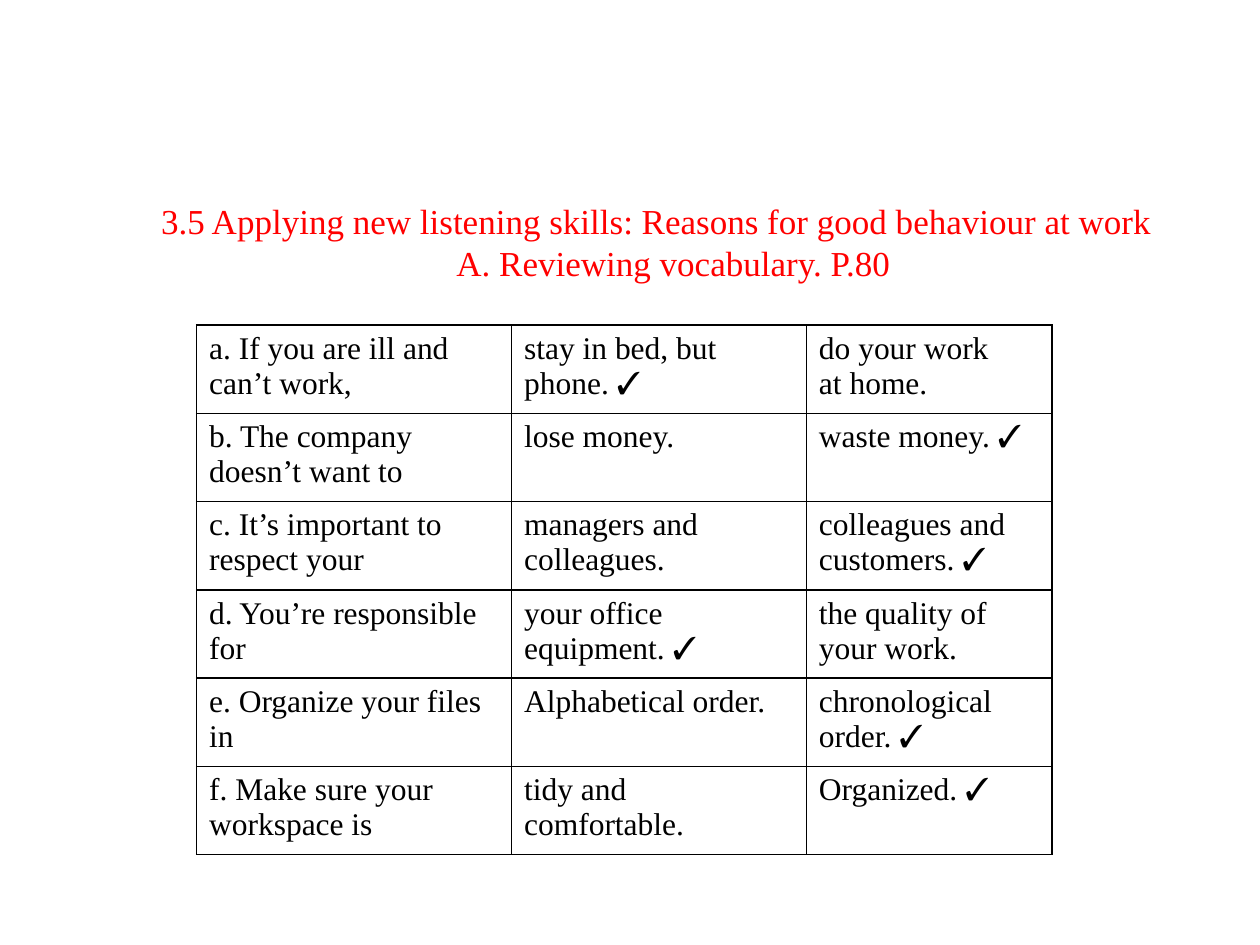
from lxml.etree import SubElement
from pptx import Presentation
from pptx.dml.color import RGBColor
from pptx.enum.text import PP_ALIGN
from pptx.oxml.ns import qn
from pptx.util import Inches, Pt

FONT = "Times New Roman"
COLORS = {"title": "FF0000", "text": "000000", "border": "000000", "cell": "FFFFFF"}

TITLE_LINES = [
    "3.5 Applying new listening skills: Reasons for good behaviour at work",
    "A. Reviewing vocabulary. P.80",
]

COLUMN_WIDTHS = [2.5, 2.34, 1.95]
ROW_HEIGHT = 0.65

# A line break inside a cell starts a new paragraph
ROWS = [
    ["a. If you are ill and can’t work,", "stay in bed, but phone. ✓", "do your work\nat home."],
    ["b. The company\ndoesn’t want to", "lose money.", "waste money. ✓"],
    ["c. It’s important to respect your", "managers and\ncolleagues.", "colleagues and\ncustomers. ✓"],
    ["d. You’re responsible for", "your office equipment. ✓", "the quality of\nyour work."],
    ["e. Organize your files in", "Alphabetical order.", "chronological\norder. ✓"],
    ["f. Make sure your\nworkspace is", "tidy and comfortable.", "Organized. ✓"],
]
BOLD_TICK_CELL = (0, 1)


def add_span(para, text, size, color, bold=False):
    span = para.add_run()
    span.text = text
    span.font.name = FONT
    span.font.size = Pt(size)
    span.font.bold = bold
    span.font.color.rgb = RGBColor.from_string(COLORS[color])


def next_para(frame, index):
    return frame.paragraphs[0] if index == 0 else frame.add_paragraph()


def add_title(page):
    box = page.shapes.add_textbox(Inches(1.21), Inches(1.58), Inches(8), Inches(0.67))
    frame = box.text_frame
    frame.word_wrap = True
    frame.margin_left = frame.margin_right = frame.margin_top = frame.margin_bottom = 0
    for index, line in enumerate(TITLE_LINES):
        para = next_para(frame, index)
        para.alignment = PP_ALIGN.CENTER
        para.line_spacing = Pt(24)
        add_span(para, line, 20, "title")
    # The second line sits slightly right of centre
    para._p.get_or_add_pPr().set("marL", str(Inches(0.27)))


def set_borders(cell):
    properties = cell._tc.get_or_add_tcPr()
    for index, side in enumerate(("lnL", "lnR", "lnT", "lnB")):
        line = SubElement(properties, qn(f"a:{side}"), w=str(Pt(1)))
        fill = SubElement(line, qn("a:solidFill"))
        SubElement(fill, qn("a:srgbClr"), val=COLORS["border"])
        properties.insert(index, line)


def fill_cell(cell, text, bold_tick):
    cell.fill.solid()
    cell.fill.fore_color.rgb = RGBColor.from_string(COLORS["cell"])
    set_borders(cell)
    for index, line in enumerate(text.split("\n")):
        para = next_para(cell.text_frame, index)
        if bold_tick:
            add_span(para, line.removesuffix("✓"), 18, "text")
            add_span(para, "✓", 18, "text", bold=True)
        else:
            add_span(para, line, 18, "text")


def add_vocabulary_table(page):
    frame = page.shapes.add_table(
        len(ROWS), len(COLUMN_WIDTHS), Inches(1.56), Inches(2.58),
        Inches(sum(COLUMN_WIDTHS)), Inches(ROW_HEIGHT * len(ROWS)))
    table = frame.table
    table.first_row = table.horz_banding = False
    for column, width in zip(table.columns, COLUMN_WIDTHS):
        column.width = Inches(width)
    for row_index, texts in enumerate(ROWS):
        table.rows[row_index].height = Inches(ROW_HEIGHT)
        for column_index, text in enumerate(texts):
            position = (row_index, column_index)
            fill_cell(table.cell(*position), text, position == BOLD_TICK_CELL)


def main():
    deck = Presentation()
    deck.slide_width, deck.slide_height = Inches(10), Inches(7.5)
    page = deck.slides.add_slide(deck.slide_layouts[6])
    add_title(page)
    add_vocabulary_table(page)
    deck.save("out.pptx")


if __name__ == "__main__":
    main()
